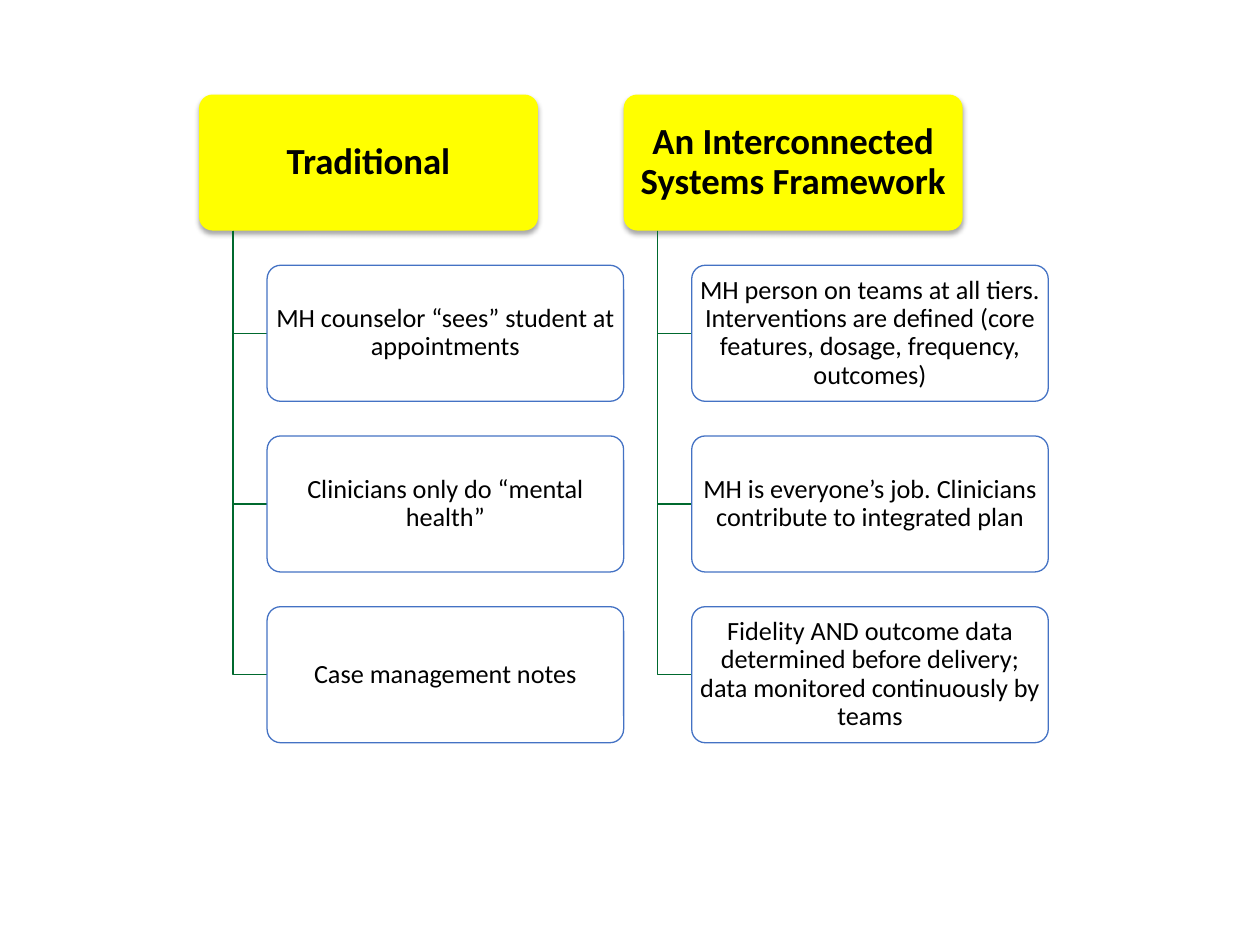
import pptx
import pptx.dml.color
import pptx.enum.shapes
import pptx.enum.text
import pptx.oxml
import pptx.oxml.ns
import pptx.util
from pptx.util import Inches

COLORS = {
    "header": "FFFF00",
    "box": "FFFFFF",
    "border": "4472C4",
    "branch": "00692E",
    "text": "000000",
}
COLUMNS = [
    ("Traditional", [
        "MH counselor “sees” student at appointments",
        "Clinicians only do “mental health”",
        "Case management notes",
    ]),
    ("An Interconnected Systems Framework", [
        "MH person on teams at all tiers. Interventions are defined "
        "(core features, dosage, frequency, outcomes)",
        "MH is everyone’s job. Clinicians contribute to integrated plan",
        "Fidelity AND outcome data determined before delivery; "
        "data monitored continuously by teams",
    ]),
]
LEFT, TOP = 1.58, 0.75
COLUMN_STEP, ROW_STEP = 3.37, 1.355
HEADER_WIDTH, BOX_WIDTH, HEIGHT = 2.69, 2.83, 1.08
STEM_OFFSET, BOX_OFFSET = 0.27, 0.54


def color(name):
    return pptx.dml.color.RGBColor.from_string(COLORS[name])


def drawing_element(xml):
    namespace = pptx.oxml.ns.nsdecls("a")
    return pptx.oxml.parse_xml(xml.replace(" ", f" {namespace} ", 1))


def set_text(shape, text, *, size, bold=False, inset_x=0.03, inset_y=0.02):
    frame = shape.text_frame
    frame.word_wrap = True
    frame.vertical_anchor = pptx.enum.text.MSO_ANCHOR.MIDDLE
    frame.margin_left = frame.margin_right = Inches(inset_x)
    frame.margin_top = frame.margin_bottom = Inches(inset_y)
    paragraph = frame.paragraphs[0]
    paragraph.alignment = pptx.enum.text.PP_ALIGN.CENTER
    paragraph.line_spacing = 0.9
    run = paragraph.add_run()
    run.text = text
    run.font.name = "Calibri"
    run.font.size = pptx.util.Pt(size)
    run.font.bold = bold
    run.font.color.rgb = color("text")


def add_rounded_box(group, left, top, width, fill):
    shape = group.shapes.add_shape(
        pptx.enum.shapes.MSO_SHAPE.ROUNDED_RECTANGLE,
        Inches(left), Inches(top), Inches(width), Inches(HEIGHT))
    shape.adjustments[0] = 0.1
    shape.shadow.inherit = False
    shape.fill.solid()
    shape.fill.fore_color.rgb = color(fill)
    return shape


def add_header(group, text, left):
    shape = add_rounded_box(group, left, TOP, HEADER_WIDTH, "header")
    shape.line.fill.background()
    effects = shape._element.spPr.find(pptx.oxml.ns.qn("a:effectLst"))
    effects.append(drawing_element(
        '<a:outerShdw blurRad="39370" dist="22860" dir="5400000" rotWithShape="0">'
        '<a:srgbClr val="000000"><a:alpha val="35000"/></a:srgbClr></a:outerShdw>'))
    set_text(shape, text, size=21, bold=True, inset_x=0.04, inset_y=0.03)


def add_detail(group, text, left, top):
    shape = add_rounded_box(group, left, top, BOX_WIDTH, "box")
    fill_color = shape._element.spPr.find(".//" + pptx.oxml.ns.qn("a:srgbClr"))
    fill_color.append(drawing_element('<a:alpha val="90000"/>'))
    shape.line.color.rgb = color("border")
    shape.line.width = pptx.util.Pt(0.75)
    set_text(shape, text, size=15)


def add_branch(group, left, top, right, bottom):
    builder = group.shapes.build_freeform(Inches(left), Inches(top))
    builder.add_line_segments(
        [(Inches(left), Inches(bottom)), (Inches(right), Inches(bottom))],
        close=False)
    shape = builder.convert_to_shape()
    shape.shadow.inherit = False
    shape.fill.background()
    shape.line.color.rgb = color("branch")
    shape.line.width = pptx.util.Pt(0.75)


def add_column(group, header, details, left):
    add_header(group, header, left)
    for row, detail in enumerate(details, start=1):
        top = TOP + row * ROW_STEP
        add_branch(group, left + STEM_OFFSET, TOP + HEIGHT,
                   left + BOX_OFFSET, top + HEIGHT / 2)
        add_detail(group, detail, left + BOX_OFFSET, top)


def main():
    presentation = pptx.Presentation()
    presentation.slide_width = Inches(10)
    presentation.slide_height = Inches(7.5)
    slide = presentation.slides.add_slide(presentation.slide_layouts[6])
    group = slide.shapes.add_group_shape()
    for index, (header, details) in enumerate(COLUMNS):
        add_column(group, header, details, LEFT + index * COLUMN_STEP)
    presentation.save("out.pptx")


if __name__ == "__main__":
    main()
